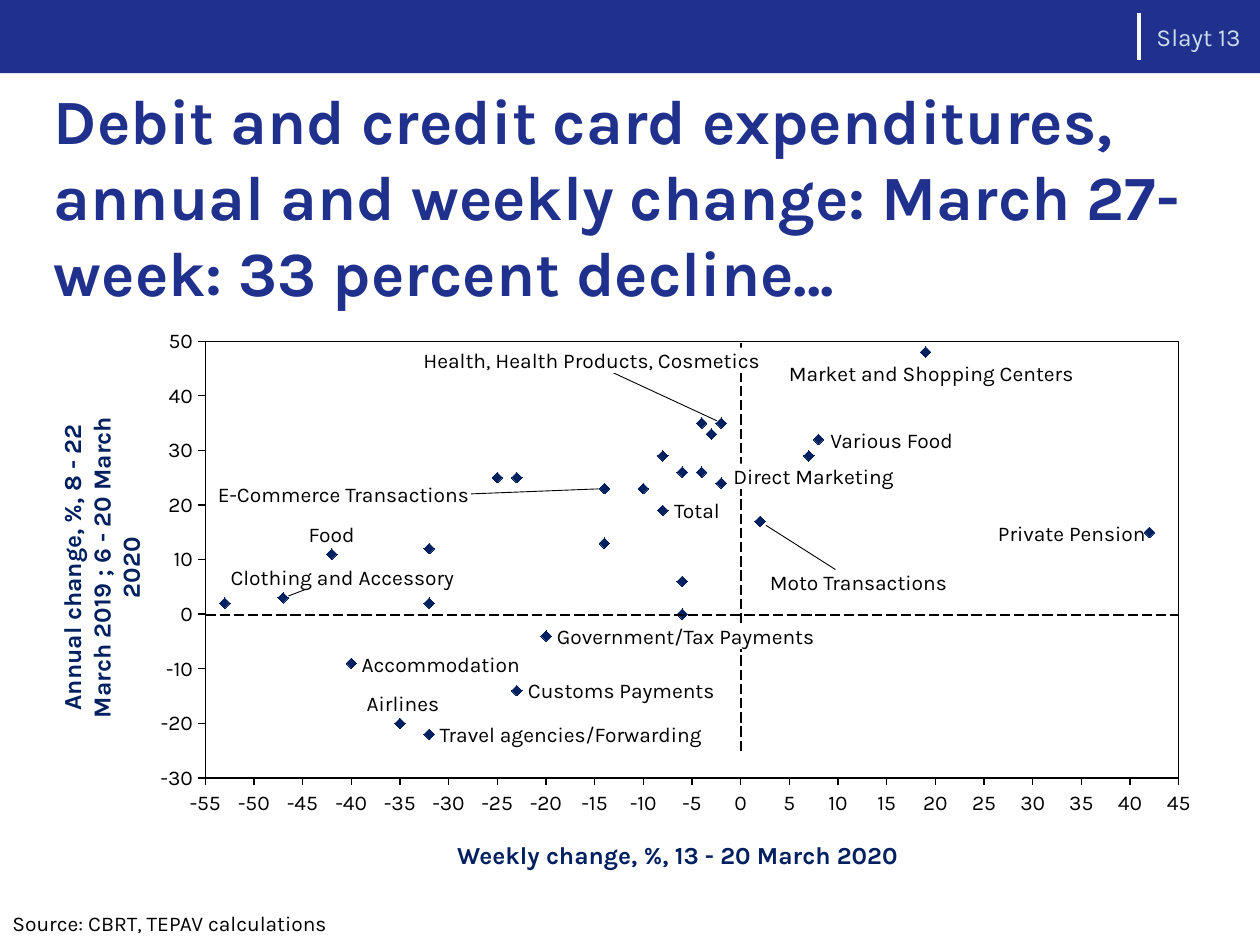
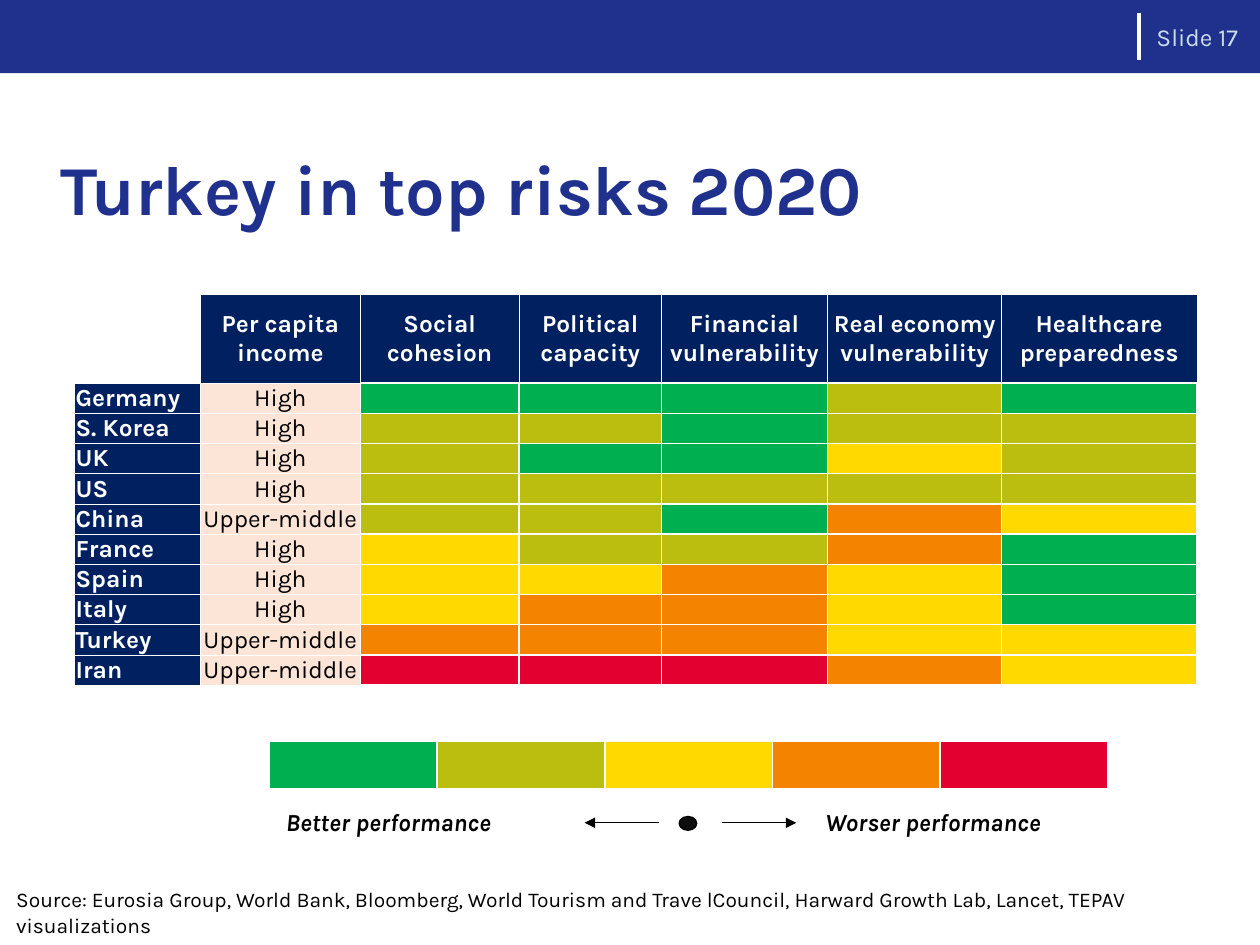
import dataclasses

import lxml.etree
import pptx
import pptx.chart.data
import pptx.dml.color
import pptx.enum.chart
import pptx.enum.dml
import pptx.enum.shapes
import pptx.enum.text
import pptx.oxml
import pptx.oxml.ns
import pptx.util

# Shared look
RGB = pptx.dml.color.RGBColor
BLUE = RGB(0x1F, 0x31, 0x8D)
NAVY = RGB(0x00, 0x20, 0x60)
PALE = RGB(0xCB, 0xDD, 0xEB)
PEACH = RGB(0xFC, 0xE4, 0xD6)
INK = RGB(0x0D, 0x0D, 0x0D)
BLACK = RGB(0, 0, 0)
WHITE = RGB(255, 255, 255)
GRADES = {
    "G": RGB(0x00, 0xB0, 0x50),
    "L": RGB(0xBC, 0xBE, 0x0F),
    "Y": RGB(0xFF, 0xD9, 0x00),
    "O": RGB(0xF4, 0x84, 0x00),
    "R": RGB(0xE3, 0x00, 0x31),
}
FONT = "Karla"
SCALE = 9144  # EMU in one px, 100 px to the inch

Pt = pptx.util.Pt
qn = pptx.oxml.ns.qn
ALIGN = pptx.enum.text.PP_ALIGN
ANCHOR = pptx.enum.text.MSO_ANCHOR
SHAPE = pptx.enum.shapes.MSO_SHAPE


@dataclasses.dataclass(frozen=True)
class Style:
    size: int = 12
    color: RGB = BLACK
    bold: bool = False
    slant: bool = False


@dataclasses.dataclass(frozen=True)
class Label:
    text: str
    left: int
    top: int
    width: int
    fill: bool = False


@dataclasses.dataclass(frozen=True)
class Line:
    start: tuple[int, int]
    end: tuple[int, int]
    width: float = 0.75
    color: RGB = BLACK
    dash: bool = False
    arrow: bool = False


PLAIN = Style()
AXIS = Style(14, NAVY, bold=True)
HEAD = Style(14, WHITE, bold=True)
CELL = Style(14)
KEY = Style(14, bold=True, slant=True)


def px(*nums: int) -> list[int]:
    return [n * SCALE for n in nums]


def write(para, text: str, style: Style) -> None:
    run = para.add_run()
    run.text = text
    font = run.font
    font.name, font.size = FONT, Pt(style.size)
    font.bold, font.italic = style.bold, style.slant
    font.color.rgb = style.color


def add_text(slide, text: str, area: tuple, style: Style = PLAIN,
             anchor=ANCHOR.TOP, align=ALIGN.LEFT):
    box = slide.shapes.add_textbox(*px(*area))
    frame = box.text_frame
    frame.word_wrap = True
    frame.vertical_anchor = anchor
    para = frame.paragraphs[0]
    para.alignment = align
    write(para, text, style)
    return box


def add_label(slide, label: Label):
    box = add_text(slide, label.text, (label.left, label.top, label.width, 20),
                   anchor=ANCHOR.MIDDLE)
    frame = box.text_frame
    frame.word_wrap = False
    frame.margin_left = 2 * SCALE
    frame.margin_right = frame.margin_top = frame.margin_bottom = 0
    if label.fill:
        box.fill.solid()
        box.fill.fore_color.rgb = WHITE
    return box


def add_line(slide, line: Line):
    link = slide.shapes.add_connector(
        pptx.enum.shapes.MSO_CONNECTOR.STRAIGHT, *px(*line.start, *line.end))
    link.line.width = Pt(line.width)
    link.line.color.rgb = line.color
    if line.dash:
        link.line.dash_style = pptx.enum.dml.MSO_LINE.LONG_DASH
    if line.arrow:
        tail = lxml.etree.SubElement(link.line._get_or_add_ln(), qn("a:tailEnd"))
        tail.set("type", "triangle")
    lxml.etree.SubElement(link._element.spPr, qn("a:effectLst"))
    return link


def add_shape(slide, kind, area: tuple, fill: RGB):
    shape = slide.shapes.add_shape(kind, *px(*area))
    shape.shadow.inherit = False
    shape.fill.solid()
    shape.fill.fore_color.rgb = fill
    shape.line.fill.background()
    return shape


def add_slide(deck, number: str, title: str, left: int, top: int, size: int):
    slide = deck.slides.add_slide(deck.slide_layouts[6])
    add_shape(slide, SHAPE.RECTANGLE, (0, 0, 1000, 58), BLUE)
    add_line(slide, Line((904, 10), (904, 48), 2.5, WHITE))
    add_text(slide, title, (left, top, 933, 92), Style(size, BLUE, bold=True),
             ANCHOR.MIDDLE)
    add_text(slide, number, (908, 0, 92, 59), Style(14, PALE), ANCHOR.MIDDLE)
    return slide


# Scatter slide
POINTS = [
    (-8, 19), (-32, 12), (-8, 29), (-6, 0), (8, 32), (7, 29), (-32, 2),
    (-4, 35), (-47, 3), (-35, -20), (-10, 23), (-40, -9), (-23, 25), (-53, 2),
    (-25, 25), (19, 48), (-14, 13), (-4, 26), (-2, 35), (-32, -22), (-2, 24),
    (-6, 6), (-6, 26), (-42, 11), (-20, -4), (42, 15), (-3, 33), (-14, 23),
    (2, 17), (-23, -14),
]
SHOP = Label("E-Commerce Transactions", 171, 382, 203)
LABELS = [
    Label("Customs Payments", 417, 538, 152),
    Label("Total", 533, 395, 48),
    Label("Various Food", 657, 339, 107),
    Label("Direct Marketing", 580, 368, 134, True),
    Label("Airlines", 289, 548, 66),
    Label("Food", 243, 414, 48),
    Label("Travel agencies/Forwarding", 347, 573, 214),
    Label("Clothing and Accessory", 181, 448, 183),
    Label("Accommodation", 285, 517, 130),
    Label("Market and Shopping Centers", 624, 286, 231),
    Label("Health, Health Products, Cosmetics", 334, 276, 271, True),
    Label("Moto Transactions", 609, 452, 146),
    Label("Government/Tax Payments", 440, 495, 211, True),
    Label("Private Pension", 790, 413, 125),
]
GUIDES = [
    Line((588, 596), (588, 271), dash=True),
    Line((163, 488), (936, 488), dash=True),
    Line((242, 468), (229, 473), 0.5),
    Line((487, 296), (569, 334), 0.5),
    Line((663, 452), (608, 417), 0.5),
]
PLOT = f"""<c:layout {pptx.oxml.ns.nsdecls("c")}><c:manualLayout>
<c:layoutTarget val="inner"/><c:xMode val="edge"/><c:yMode val="edge"/>
<c:x val="0.06"/><c:y val="0.03"/><c:w val="0.91"/><c:h val="0.88"/>
</c:manualLayout></c:layout>"""
FRAME = f"""<c:spPr {pptx.oxml.ns.nsdecls("c", "a")}><a:noFill/><a:ln w="9525">
<a:solidFill><a:srgbClr val="{BLACK}"/></a:solidFill></a:ln></c:spPr>"""


def set_axis(axis, low: int, high: int, step: int) -> None:
    enum = pptx.enum.chart
    axis.minimum_scale, axis.maximum_scale, axis.major_unit = low, high, step
    axis.has_major_gridlines = False
    axis.has_title = False
    axis.major_tick_mark = enum.XL_TICK_MARK.OUTSIDE
    axis.minor_tick_mark = enum.XL_TICK_MARK.NONE
    axis.crosses = enum.XL_AXIS_CROSSES.MINIMUM
    axis.format.line.width = Pt(0.75)
    axis.format.line.color.rgb = BLACK
    marks = axis.tick_labels
    marks.number_format = '#,##0;"-"#,##0'
    marks.number_format_is_linked = False
    marks.font.name, marks.font.size = FONT, Pt(12)
    marks.font.color.rgb = BLACK


def add_chart(slide) -> None:
    enum = pptx.enum.chart
    data = pptx.chart.data.XyChartData()
    group = data.add_series("Series 1")
    for x, y in POINTS:
        group.add_data_point(x, y)
    chart = slide.shapes.add_chart(enum.XL_CHART_TYPE.XY_SCATTER,
                                   *px(112, 259, 849, 394), data).chart
    chart.has_legend = chart.has_title = False
    chart.font.name, chart.font.size = FONT, Pt(10)
    chart.font.color.rgb = BLACK
    set_axis(chart.category_axis, -55, 45, 5)
    set_axis(chart.value_axis, -30, 50, 10)
    chart.plots[0].vary_by_categories = False
    dots = chart.plots[0].series[0]
    dots.smooth = False
    dots.format.line.fill.background()
    dots.marker.style = enum.XL_MARKER_STYLE.DIAMOND
    dots.marker.size = 6
    dots.marker.format.fill.solid()
    dots.marker.format.fill.fore_color.rgb = NAVY
    dots.marker.format.line.color.rgb = NAVY
    area = chart._chartSpace.chart.plotArea
    for old in area.findall(qn("c:layout")):
        area.remove(old)
    area.insert(0, pptx.oxml.parse_xml(PLOT))
    area.append(pptx.oxml.parse_xml(FRAME))


def draw_cards(deck) -> None:
    slide = add_slide(
        deck, "Slayt 13", "Debit and credit card expenditures, annual and weekly "
        "change: March 27-week: 33 percent decline...", 33, 109, 36)
    add_text(slide, "Source: CBRT, TEPAV calculations", (0, 718, 659, 30))
    add_chart(slide)
    for line in GUIDES:
        add_line(slide, line)
    for label in LABELS:
        add_label(slide, label)
    box = add_label(slide, SHOP)
    lead = Line((SHOP.left + SHOP.width, SHOP.top + 10), (475, 388), 0.5)
    add_line(slide, lead).begin_connect(box, 3)
    add_text(slide, "Weekly change, %, 13 - 20 March 2020", (353, 662, 431, 34), AXIS)
    side = add_text(slide, "Annual change, %, 8 - 22 March 2019 ; 6 - 20 March 2020",
                    (-70, 410, 301, 81), AXIS, align=ALIGN.CENTER)
    side.rotation = 270


# Risk slide
HEADS = ["Per capita income", "Social cohesion", "Political capacity",
         "Financial vulnerability", "Real economy vulnerability",
         "Healthcare preparedness"]
RISKS = [
    ("Germany", "High", "GGGLG"), ("S. Korea", "High", "LLGLL"),
    ("UK", "High", "LGGYL"), ("US", "High", "LLLLL"),
    ("China", "Upper-middle", "LLGOY"), ("France", "High", "YLLOG"),
    ("Spain", "High", "YYOYG"), ("Italy", "High", "YOOYG"),
    ("Turkey", "Upper-middle", "OOOYY"), ("Iran", "Upper-middle", "RRROY"),
]


def add_grid(slide, left: int, top: int, cols: list[int], rows: list[int]):
    grid = slide.shapes.add_table(len(rows), len(cols),
                                  *px(left, top, sum(cols), sum(rows))).table
    grid.first_row = grid.horz_banding = False
    for col, width in zip(grid.columns, cols):
        col.width = width * SCALE
    for row, height in zip(grid.rows, rows):
        row.height = height * SCALE
    return grid


def set_cell(cell, fill: RGB, text: str = "", style: Style = HEAD,
             align=ALIGN.CENTER) -> None:
    cell.margin_left = cell.margin_right = SCALE
    cell.margin_top = cell.margin_bottom = 0
    cell.vertical_anchor = ANCHOR.MIDDLE
    para = cell.text_frame.paragraphs[0]
    para.alignment = align
    if text:
        write(para, text, style)
    else:
        lxml.etree.SubElement(para._p, qn("a:endParaRPr")).set("sz", "1000")
    trim = cell._tc.get_or_add_tcPr()
    for side in ("a:lnL", "a:lnR", "a:lnT", "a:lnB"):
        edge = lxml.etree.SubElement(trim, qn(side))
        edge.set("w", str(Pt(0.5 if text else 1)))
        paint = lxml.etree.SubElement(edge, qn("a:solidFill"))
        lxml.etree.SubElement(paint, qn("a:srgbClr")).set("val", str(WHITE))
    cell.fill.solid()
    cell.fill.fore_color.rgb = fill


def draw_risks(deck) -> None:
    slide = add_slide(deck, "Slide 17", "Turkey in top risks 2020", 38, 103, 40)
    # Heat map
    grid = add_grid(slide, 59, 234, [100, 127, 126, 113, 132, 138, 155],
                    [70] + [24] * len(RISKS))
    set_cell(grid.cell(0, 0), WHITE)
    for col, head in enumerate(HEADS, 1):
        set_cell(grid.cell(0, col), NAVY, head)
    for row, (land, wealth, marks) in enumerate(RISKS, 1):
        set_cell(grid.cell(row, 0), NAVY, land, align=ALIGN.LEFT)
        set_cell(grid.cell(row, 1), PEACH, wealth, CELL)
        for col, mark in enumerate(marks, 2):
            set_cell(grid.cell(row, col), GRADES[mark])
    # Colour key
    scale = add_grid(slide, 214, 588, [133] * len(GRADES), [38])
    for col, fill in enumerate(GRADES.values()):
        set_cell(scale.cell(0, col), fill)
    dot = add_shape(slide, SHAPE.OVAL, (539, 648, 14, 11), INK)
    dot.line.color.rgb = BLACK
    dot.line.width = Pt(0.75)
    for start, end in ((573, 632), (523, 464)):
        add_line(slide, Line((start, 653), (end, 653), arrow=True))
    add_text(slide, "Better performance", (217, 636, 230, 34), KEY)
    add_text(slide, "Worser performance", (645, 636, 260, 34), KEY)
    add_text(slide, "Source: Eurosia Group, World Bank, Bloomberg, World Tourism and "
             "Trave lCouncil, Harward Growth Lab, Lancet, TEPAV visualizations",
             (3, 699, 925, 50))


def main() -> None:
    deck = pptx.Presentation()
    deck.slide_width, deck.slide_height = px(1000, 750)
    draw_cards(deck)
    draw_risks(deck)
    deck.save("out.pptx")


if __name__ == "__main__":
    main()
